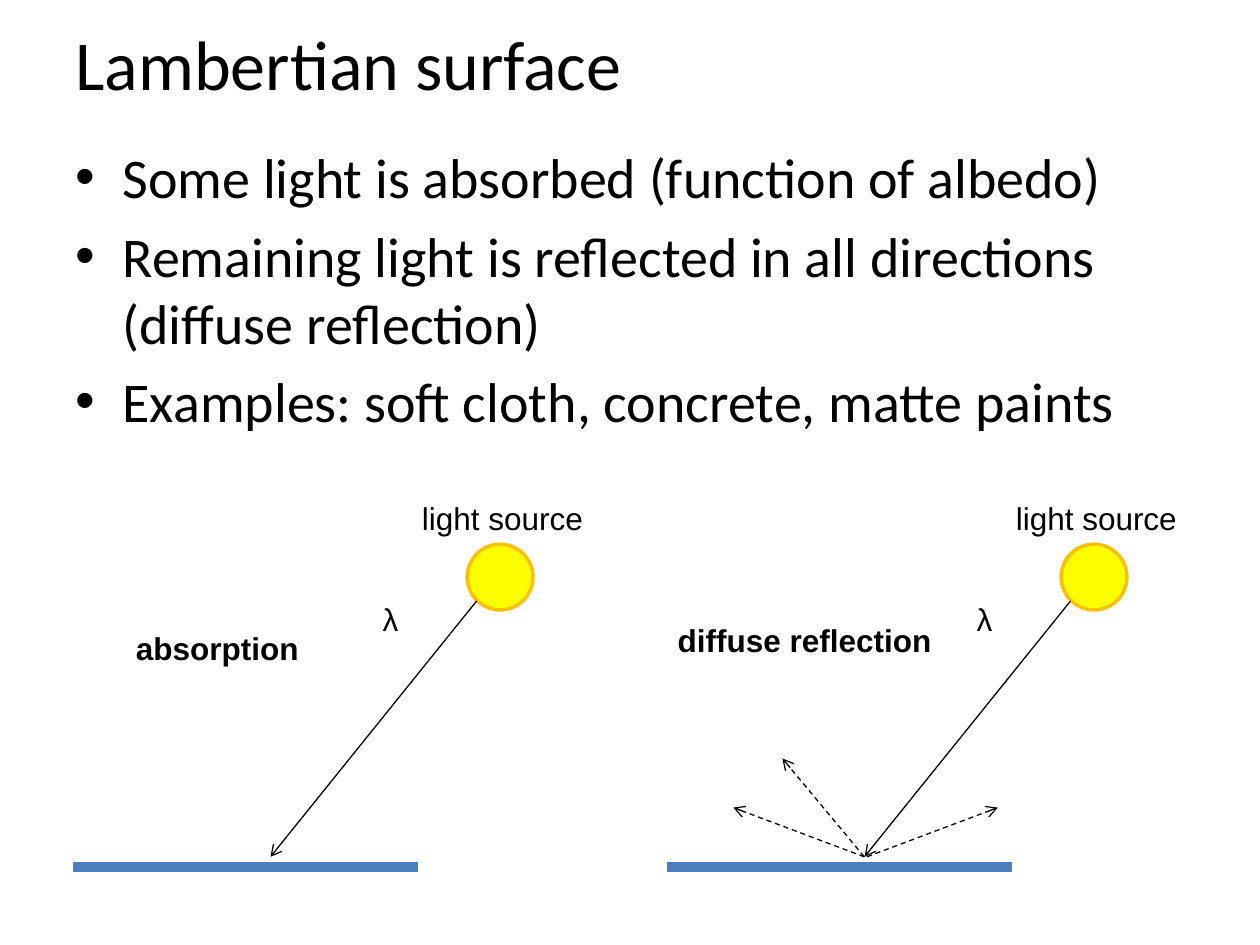
from lxml import etree
from pptx import Presentation
from pptx.dml.color import RGBColor
from pptx.enum.dml import MSO_LINE
from pptx.enum.shapes import MSO_CONNECTOR, MSO_SHAPE
from pptx.enum.text import MSO_ANCHOR, PP_ALIGN
from pptx.oxml.ns import qn
from pptx.util import Pt

STRAIGHT, OVAL = MSO_CONNECTOR.STRAIGHT, MSO_SHAPE.OVAL
DASH, LEFT, MIDDLE = MSO_LINE.DASH, PP_ALIGN.LEFT, MSO_ANCHOR.MIDDLE

# Content
TITLE = "Lambertian surface"
POINTS = [
    "Some light is absorbed (function of albedo)",
    "Remaining light is reflected in all directions (diffuse reflection)",
    "Examples: soft cloth, concrete, matte paints",
]
# Scenes: left shift, caption, caption box
SCENES = [
    (0, "absorption", (70.6, 355.7, 108.7, 29)),
    (339.4, "diffuse reflection", (380.2, 351.4, 161.3, 29)),
]
# Scattered rays: start, end
RAYS = [
    ((493.9, 489.6), (447.1, 433.4)),
    ((493.9, 489.6), (419, 461.5)),
    ((495.4, 489.6), (570.2, 461.5)),
]
COLORS = {"ink": "000000", "bar": "4B7EBC", "sun": "FFFF00", "rim": "FFC000"}


def rgb(name):
    return RGBColor.from_string(COLORS[name])


def style(para, size, face, bold=False):
    for run in para.runs:
        run.font.size, run.font.name, run.font.bold = Pt(size), face, bold
        run.font.color.rgb = rgb("ink")


def add_text(slide, box, text, wrap=False, bold=False):
    frame = slide.shapes.add_textbox(*map(Pt, box)).text_frame
    frame.word_wrap = wrap
    frame.text = text
    style(frame.paragraphs[0], 18, "Arial", bold)


def add_line(slide, start, end, color="ink", width=0.75, arrow=True, dash=None):
    line = slide.shapes.add_connector(STRAIGHT, *map(Pt, (*start, *end)))
    line.line.color.rgb = rgb(color)
    line.line.width = Pt(width)
    if dash:
        line.line.dash_style = dash
    props = line._element.spPr
    if arrow:
        etree.SubElement(props.find(qn("a:ln")), qn("a:tailEnd"), type="arrow")
    etree.SubElement(props, qn("a:effectLst"))


def add_points(slide):
    frame = slide.shapes.add_textbox(Pt(36), Pt(78), Pt(648), Pt(404.6)).text_frame
    frame.word_wrap = True
    frame.text = "\n".join(POINTS)
    for para in frame.paragraphs:
        para.space_before = Pt(6.4)
        style(para, 32, "Calibri")
        props = para._p.get_or_add_pPr()
        props.set("marL", str(Pt(27)))
        props.set("indent", str(-Pt(27)))
        etree.SubElement(props, qn("a:buFont"), typeface="Arial")
        etree.SubElement(props, qn("a:buChar"), char="•")


def add_scene(slide, shift, name, box):
    # Surface
    add_line(slide, (42 + shift, 495.4), (238.8 + shift, 495.4), "bar", 6, False)
    # Light source and its ray
    sun = slide.shapes.add_shape(OVAL, Pt(267 + shift), Pt(311), Pt(37.6), Pt(37.6))
    sun.shadow.inherit = False
    sun.fill.solid()
    sun.fill.fore_color.rgb = rgb("sun")
    sun.line.color.rgb = rgb("rim")
    sun.line.width = Pt(2)
    add_line(slide, (272.4 + shift, 343.4), (154.6 + shift, 489.6))
    # Labels
    add_text(slide, (211.5 + shift, 339.1, 36.7, 45.4), "λ")
    add_text(slide, (234 + shift, 281.5, 108, 30), "light source", wrap=True)
    add_text(slide, box, name, bold=True)


def main():
    deck = Presentation()
    deck.slide_width, deck.slide_height = Pt(720), Pt(540)
    slide = deck.slides.add_slide(deck.slide_layouts[5])

    # Title
    title = slide.shapes.title
    title.left, title.top, title.width, title.height = map(Pt, (36, 0, 648, 72))
    frame = title.text_frame
    frame.text = TITLE
    frame.vertical_anchor = MIDDLE
    frame.paragraphs[0].alignment = LEFT
    style(frame.paragraphs[0], 40, "Calibri")

    add_points(slide)
    for scene in SCENES:
        add_scene(slide, *scene)
    for start, end in RAYS:
        add_line(slide, start, end, dash=DASH)
    deck.save("out.pptx")


if __name__ == "__main__":
    main()
